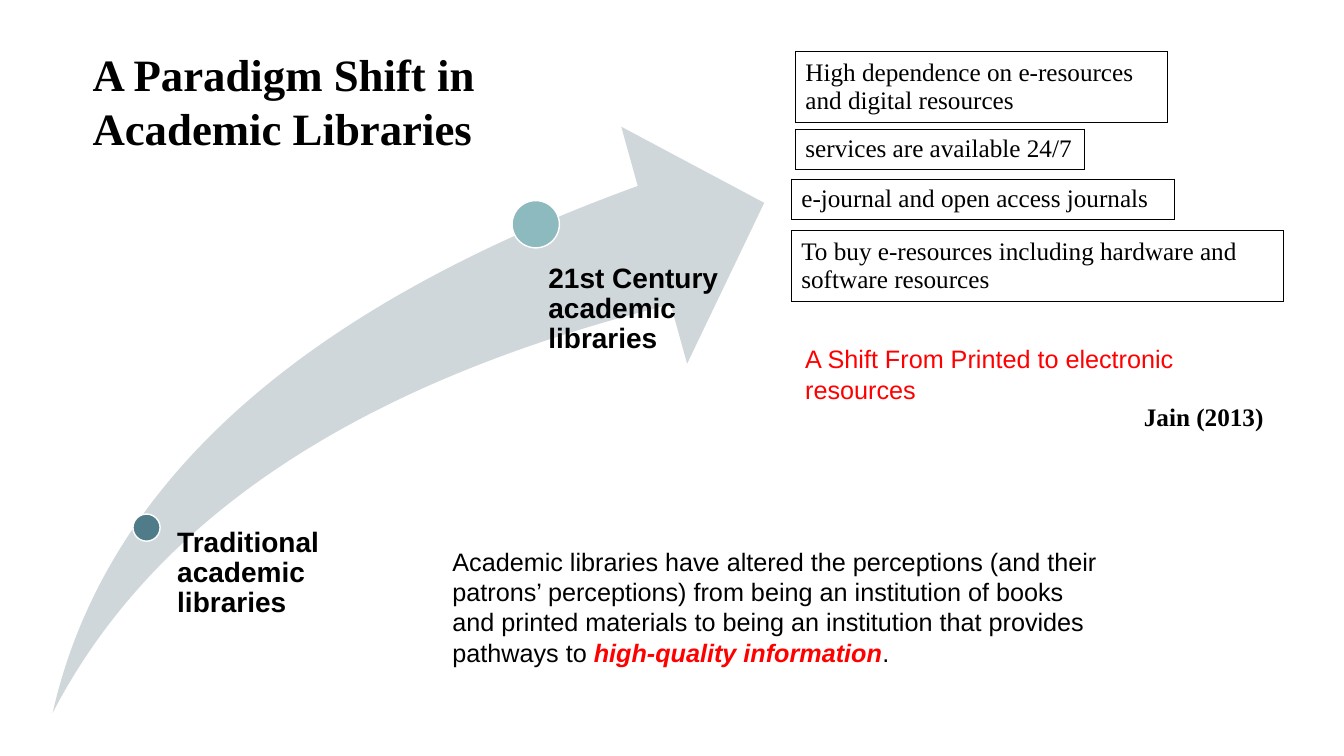
from dataclasses import dataclass

from lxml import etree
from pptx import Presentation
from pptx.dml.color import RGBColor
from pptx.enum.shapes import MSO_SHAPE
from pptx.enum.text import MSO_ANCHOR
from pptx.oxml import parse_xml
from pptx.oxml.ns import nsdecls
from pptx.slide import Slide
from pptx.util import Pt

SWOOSH, OVAL = MSO_SHAPE.SWOOSH_ARROW, MSO_SHAPE.OVAL
TOP, MIDDLE = MSO_ANCHOR.TOP, MSO_ANCHOR.MIDDLE


@dataclass(frozen=True)
class Theme:
    ink: str = "000000"
    red: str = "FF0000"
    white: str = "FFFFFF"
    swoosh: str = "D0D7DA"
    dark: str = "507C89"
    light: str = "8CBABE"
    sans: str = "Arial"
    serif: str = "Times New Roman"
    title: float = 32
    label: float = 20
    body: float = 18
    rule: float = 0.5


@dataclass(frozen=True)
class Box:
    left: float
    top: float
    width: float
    height: float

    def points(self) -> tuple:
        return Pt(self.left), Pt(self.top), Pt(self.width), Pt(self.height)


@dataclass(frozen=True)
class Run:
    text: str
    font: str
    size: float
    color: str
    bold: bool = False
    slant: bool = False


@dataclass(frozen=True)
class Label:
    box: Box
    runs: tuple[Run, ...]
    inset: float | None = None


@dataclass(frozen=True)
class Dot:
    box: Box
    color: str


@dataclass(frozen=True)
class Card:
    box: Box
    text: str


THEME = Theme()

DOTS = (
    Dot(Box(95, 367.2, 19.4, 19.4), THEME.dark),
    Dot(Box(365.8, 143.3, 33.8, 33.8), THEME.light),
)

LABELS = (
    Label(Box(116.6, 377.3, 181.4, 46),
          (Run("Traditional academic libraries", THEME.sans, THEME.label, THEME.ink, True),), 10),
    Label(Box(373.7, 188.6, 181.4, 62),
          (Run("21st Century academic libraries", THEME.sans, THEME.label, THEME.ink, True),), 18),
    Label(Box(59, 30.2, 411.1, 162.7),
          (Run("A Paradigm Shift in Academic Libraries", THEME.serif, THEME.title, THEME.ink, True),)),
    Label(Box(810, 283, 127.4, 51),
          (Run("Jain (2013)", THEME.serif, THEME.body, THEME.ink, True),)),
    Label(Box(316.1, 386.6, 480.2, 94.3), (
        Run("Academic libraries have altered the perceptions (and their patrons’ perceptions) "
            "from being an institution of books and printed materials to being an institution "
            "that provides pathways to ", THEME.sans, THEME.body, THEME.ink),
        Run("high-quality information", THEME.sans, THEME.body, THEME.red, True, True),
        Run(".", THEME.sans, THEME.body, THEME.ink),
    )),
    Label(Box(568.1, 241.9, 282.2, 51),
          (Run("A Shift From Printed to electronic resources", THEME.sans, THEME.body, THEME.red),)),
)

CARDS = (
    Card(Box(568.1, 37, 265.7, 50.4), "High dependence on e-resources and digital resources"),
    Card(Box(568.1, 92, 206.6, 29), "services are available 24/7"),
    Card(Box(565.2, 127.8, 273.6, 29), "e-journal and open access journals"),
    Card(Box(565.2, 164.6, 351.4, 50.4),
         "To buy e-resources including hardware and software resources"),
)


def assign(target: object, values: dict) -> None:
    """Set each named value on the target."""
    for name, value in values.items():
        setattr(target, name, value)


def write(para, runs: tuple[Run, ...]) -> None:
    """Add styled runs to a paragraph."""
    for item in runs:
        run = para.add_run()
        run.text = item.text
        assign(run.font, {"name": item.font, "size": Pt(item.size),
                          "bold": item.bold, "italic": item.slant})
        run.font.color.rgb = RGBColor.from_string(item.color)


def draw_shape(slide: Slide, kind: MSO_SHAPE, box: Box, color: str):
    """Draw a flat filled shape without a line."""
    shape = slide.shapes.add_shape(kind, *box.points())
    shape.shadow.inherit = False
    shape.fill.solid()
    shape.fill.fore_color.rgb = RGBColor.from_string(color)
    shape.line.fill.background()
    return shape


def draw_swoosh(slide: Slide) -> None:
    """Draw the rising arrow."""
    arrow = draw_shape(slide, SWOOSH, Box(6.5, 118, 559.5, 349.2), THEME.swoosh)
    arrow.rotation = 350.9
    for index in range(2):
        arrow.adjustments[index] = 0.25


def draw_dot(slide: Slide, dot: Dot) -> None:
    """Draw a milestone dot with a white rim."""
    shape = draw_shape(slide, OVAL, dot.box, dot.color)
    shape.line.color.rgb = RGBColor.from_string(THEME.white)
    shape.line.width = Pt(1)


def draw_label(slide: Slide, label: Label) -> None:
    """Draw a wrapped text box."""
    frame = slide.shapes.add_textbox(*label.box.points()).text_frame
    assign(frame, {"word_wrap": True, "vertical_anchor": TOP})
    para = frame.paragraphs[0]
    if label.inset is not None:
        assign(frame, {"margin_left": Pt(label.inset), "margin_top": 0,
                       "margin_right": 0, "margin_bottom": 0})
        para.line_spacing = 0.9
    write(para, label.runs)


def draw_card(slide: Slide, card: Card) -> None:
    """Draw a framed table of one cell."""
    table = slide.shapes.add_table(1, 1, *card.box.points()).table
    assign(table, {"first_row": False, "horz_banding": False})
    cell = table.cell(0, 0)
    cell.vertical_anchor = MIDDLE
    props = cell._tc.get_or_add_tcPr()
    for side in "LRTB":
        edge = parse_xml(f'<a:ln{side} {nsdecls("a")} w="{Pt(THEME.rule)}"/>')
        fill = etree.SubElement(edge, f"{{{edge.nsmap['a']}}}solidFill")
        etree.SubElement(fill, f"{{{edge.nsmap['a']}}}srgbClr", val=THEME.ink)
        props.append(edge)
    cell.fill.background()
    write(cell.text_frame.paragraphs[0],
          (Run(card.text, THEME.serif, THEME.body, THEME.ink),))


def main() -> None:
    """Build and save the slide."""
    deck = Presentation()
    assign(deck, {"slide_width": Pt(960), "slide_height": Pt(540)})
    slide = deck.slides.add_slide(deck.slide_layouts[6])
    draw_swoosh(slide)
    for dot in DOTS:
        draw_dot(slide, dot)
    for label in LABELS:
        draw_label(slide, label)
    for card in CARDS:
        draw_card(slide, card)
    deck.save("out.pptx")


if __name__ == "__main__":
    main()
